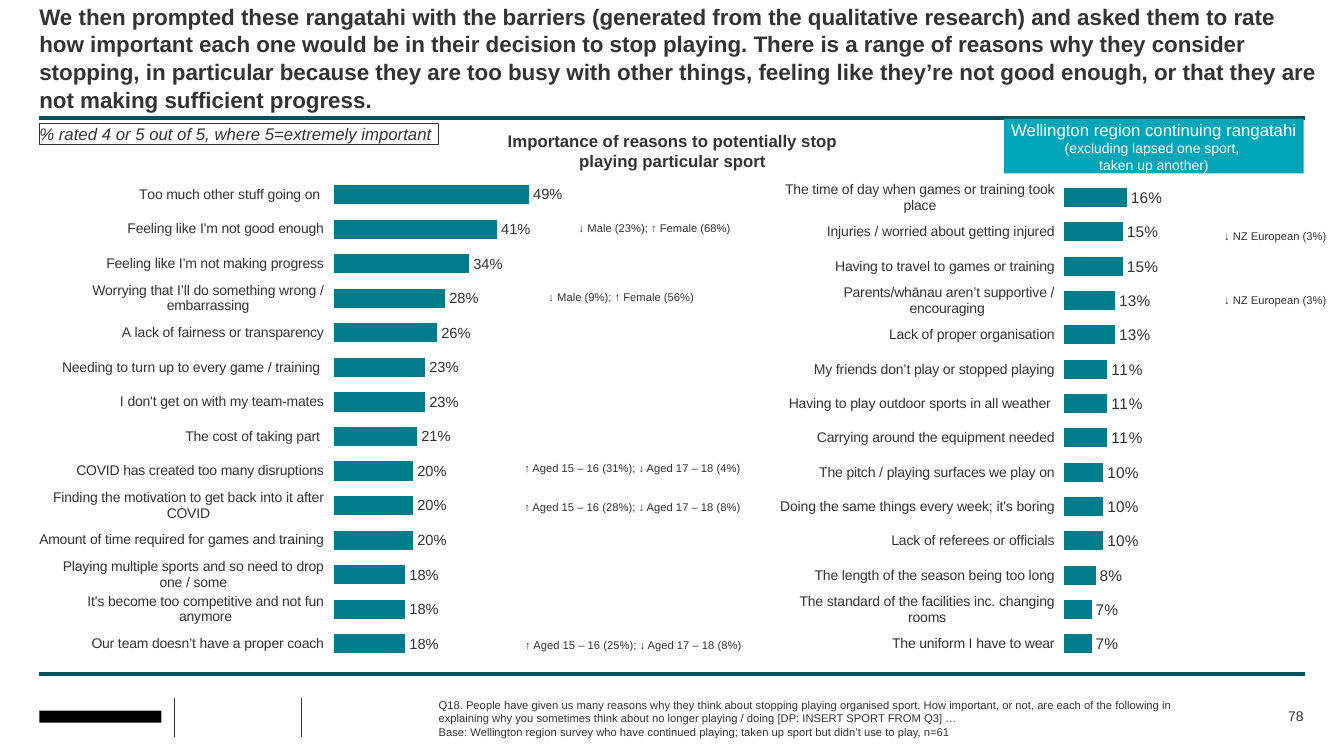
from lxml import etree
from pptx import Presentation
from pptx.chart.data import CategoryChartData
from pptx.dml.color import RGBColor
from pptx.enum.chart import XL_CHART_TYPE, XL_LABEL_POSITION
from pptx.enum.shapes import MSO_CONNECTOR, MSO_SHAPE
from pptx.enum.text import MSO_ANCHOR, PP_ALIGN
from pptx.oxml import parse_xml
from pptx.oxml.ns import nsdecls, qn
from pptx.util import Inches, Pt

BAR = XL_CHART_TYPE.BAR_CLUSTERED
OUTSIDE = XL_LABEL_POSITION.OUTSIDE_END
STRAIGHT = MSO_CONNECTOR.STRAIGHT
RECTANGLE = MSO_SHAPE.RECTANGLE
TOP, MIDDLE = MSO_ANCHOR.TOP, MSO_ANCHOR.MIDDLE
LEFT, CENTER, RIGHT = PP_ALIGN.LEFT, PP_ALIGN.CENTER, PP_ALIGN.RIGHT

FONT = "Arial"
COLORS = {"text": "333333", "rule": "00525C", "bar": "007C8A", "tag": "00A5B8",
          "white": "FFFFFF", "black": "000000"}

MAIN_REASONS = [
    ("Our team doesn’t have a proper coach", 0.18),
    ("It's become too competitive and not fun anymore", 0.18),
    ("Playing multiple sports and so need to drop one / some", 0.18),
    ("Amount of time required for games and training", 0.2),
    ("Finding the motivation to get back into it after COVID", 0.2),
    ("COVID has created too many disruptions", 0.2),
    ("The cost of taking part ", 0.21),
    ("I don't get on with my team-mates", 0.23),
    ("Needing to turn up to every game / training ", 0.23),
    ("A lack of fairness or transparency", 0.26),
    ("Worrying that I’ll do something wrong / embarrassing", 0.28),
    ("Feeling like I'm not making progress", 0.34),
    ("Feeling like I'm not good enough", 0.41),
    ("Too much other stuff going on ", 0.49),
]
OTHER_REASONS = [
    ("The uniform I have to wear", 0.07),
    ("The standard of the facilities inc. changing rooms", 0.07),
    ("The length of the season being too long", 0.08),
    ("Lack of referees or officials", 0.1),
    ("Doing the same things every week; it's boring", 0.1),
    ("The pitch / playing surfaces we play on", 0.1),
    ("Carrying around the equipment needed", 0.11),
    ("Having to play outdoor sports in all weather ", 0.11),
    ("My friends don’t play or stopped playing", 0.11),
    ("Lack of proper organisation", 0.13),
    ("Parents/whānau aren’t supportive / encouraging ", 0.13),
    ("Having to travel to games or training", 0.15),
    ("Injuries / worried about getting injured", 0.15),
    ("The time of day when games or training took place", 0.16),
]
DIFFERENCES = [
    (5.74, 2.2, 2.0, "↓ Male (23%); ↑ Female (68%)"),
    (5.44, 2.88, 2.0, "↓ Male (9%); ↑ Female (56%)"),
    (5.2, 4.58, 2.5, "↑ Aged 15 – 16 (31%); ↓ Aged 17 – 18 (4%)"),
    (5.2, 4.96, 2.5, "↑ Aged 15 – 16 (28%); ↓ Aged 17 – 18 (8%)"),
    (5.21, 6.33, 2.5, "↑ Aged 15 – 16 (25%); ↓ Aged 17 – 18 (8%)"),
    (12.14, 2.28, 1.15, "↓ NZ European (3%)"),
    (12.14, 2.91, 1.15, "↓ NZ European (3%)"),
]
TITLE = (
    "We then prompted these rangatahi with the barriers (generated from the qualitative "
    "research) and asked them to rate how important each one would be in their decision to "
    "stop playing. There is a range of reasons why they consider stopping, in particular "
    "because they are too busy with other things, feeling like they’re not good enough, or "
    "that they are not making sufficient progress.")
QUESTION = (
    "Q18. People have given us many reasons why they think about stopping playing organised "
    "sport. How important, or not, are each of the following in explaining why you sometimes "
    "think about no longer playing / doing [DP: INSERT SPORT FROM Q3] …")
BASE = ("Base: Wellington region survey who have continued playing; taken up sport but "
        "didn’t use to play, n=61")


def color(name):
    """Return the named colour."""
    return RGBColor.from_string(COLORS[name])


def set_font(font, size, name="text", bold=False, italic=False):
    """Format a font."""
    font.name, font.size = FONT, Pt(size)
    font.bold, font.italic = bold, italic
    font.color.rgb = color(name)


def write(box, *paragraphs, align=LEFT, anchor=TOP, spacing=None, **style):
    """Fill a box with paragraphs, each a list of (text, size) spans."""
    frame = box.text_frame
    frame.word_wrap = True
    frame.vertical_anchor = anchor
    frame.margin_left = frame.margin_right = frame.margin_top = frame.margin_bottom = 0
    for index, spans in enumerate(paragraphs):
        para = frame.add_paragraph() if index else frame.paragraphs[0]
        para.alignment = align
        para.line_spacing = spacing
        for text, size in spans:
            span = para.add_run()
            span.text = text
            set_font(span.font, size, **style)


def add_text(page, left, top, width, height, *paragraphs, **style):
    """Add a text box."""
    box = page.shapes.add_textbox(Inches(left), Inches(top), Inches(width), Inches(height))
    write(box, *paragraphs, **style)


def add_box(page, left, top, width, height, fill=None, line=None):
    """Add a plain rectangle."""
    box = page.shapes.add_shape(
        RECTANGLE, Inches(left), Inches(top), Inches(width), Inches(height))
    box.shadow.inherit = False
    if fill:
        box.fill.solid()
        box.fill.fore_color.rgb = color(fill)
    else:
        box.fill.background()
    if line:
        box.line.color.rgb = color(line)
        box.line.width = Pt(0.75)
    else:
        box.line.fill.background()
    return box


def add_line(page, start, end, name, width):
    """Add a straight line."""
    line = page.shapes.add_connector(STRAIGHT, *map(Inches, start + end))
    line.line.color.rgb = color(name)
    line.line.width = Pt(width)
    etree.SubElement(line._element.spPr, qn("a:effectLst"))


def add_bars(page, left, top, width, height, reasons, label_size):
    """Add a bar chart of reasons."""
    data = CategoryChartData(number_format="0%")
    data.categories = [reason for reason, _ in reasons]
    data.add_series("Series 1", [share for _, share in reasons])
    chart = page.shapes.add_chart(
        BAR, Inches(left), Inches(top), Inches(width), Inches(height), data).chart
    chart.has_title = chart.has_legend = False
    set_font(chart.font, 12)
    axis = chart.category_axis
    axis.format.line.fill.background()
    axis.has_major_gridlines = False
    set_font(axis.tick_labels.font, 10)
    scale = chart.value_axis
    scale.minimum_scale, scale.maximum_scale = 0, 1
    scale.has_major_gridlines = False
    scale.visible = False
    plot = chart.plots[0]
    plot.gap_width, plot.overlap, plot.vary_by_categories = 80, -10, False
    series = plot.series[0]
    series.format.fill.solid()
    series.format.fill.fore_color.rgb = color("bar")
    labels = series.data_labels
    labels.show_value = True
    labels.number_format, labels.number_format_is_linked = "0%", False
    labels.position = OUTSIDE
    set_font(labels.font, label_size)
    area = chart._chartSpace.chart.plotArea
    for layout in area.findall(qn("c:layout")):
        area.remove(layout)
    area.insert(0, parse_xml(
        f'<c:layout {nsdecls("c")}><c:manualLayout><c:layoutTarget val="inner"/>'
        '<c:xMode val="edge"/><c:yMode val="edge"/><c:x val="0.422"/><c:y val="0"/>'
        '<c:w val="0.578"/><c:h val="1"/></c:manualLayout></c:layout>'))


def main():
    """Build the slide."""
    deck = Presentation()
    deck.slide_width, deck.slide_height = Inches(13.33), Inches(7.5)
    page = deck.slides.add_slide(deck.slide_layouts[6])
    for height in (1.17, 6.69):
        add_line(page, (0.39, height), (12.94, height), "rule", 3)
    for across in (1.73, 2.99):
        add_line(page, (across, 6.92), (across, 7.31), "text", 1)
    add_box(page, 0.39, 7.05, 1.21, 0.12, fill="black")
    add_text(page, 0.39, 0.02, 12.76, 1.1, [(TITLE, 16)], bold=True, spacing=1.03)
    add_bars(page, 0.39, 1.76, 6.88, 4.8, MAIN_REASONS, 10.5)
    add_bars(page, 7.73, 1.79, 6.7, 4.77, OTHER_REASONS, 11)
    write(add_box(page, 0.39, 1.23, 3.96, 0.2, line="text"),
          [("% rated 4 or 5 out of 5, where 5=extremely important", 12)],
          italic=True, anchor=MIDDLE)
    write(add_box(page, 9.96, 1.18, 2.97, 0.54, fill="tag"),
          [("Wellington region continuing rangatahi ", 12),
           ("(excluding lapsed one sport, ", 10)],
          [("taken up another)", 10)], name="white", align=CENTER, anchor=MIDDLE)
    add_text(page, 4.93, 1.3, 3.48, 0.4,
             [("Importance of reasons to potentially stop playing particular sport", 12)],
             bold=True, align=CENTER)
    for left, top, width, text in DIFFERENCES:
        add_text(page, left, top, width, 0.13, [(text, 8)])
    add_text(page, 4.35, 7.05, 7.8, 0.15, [(QUESTION, 8)], [(BASE, 8)], anchor=MIDDLE)
    add_text(page, 11.87, 6.99, 1.06, 0.22, [("78", 10)], align=RIGHT, anchor=MIDDLE)
    deck.save("out.pptx")


if __name__ == "__main__":
    main()
